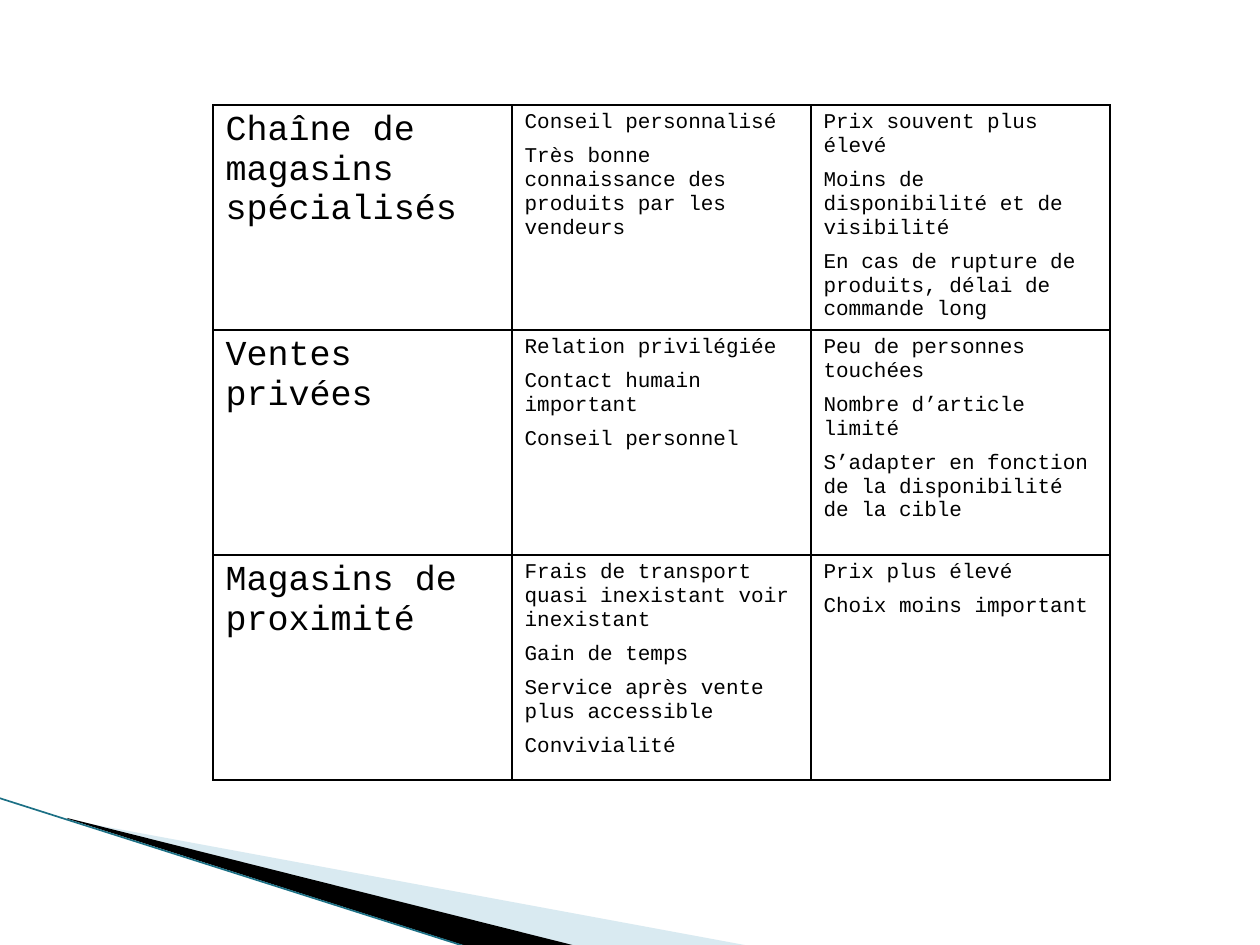
from dataclasses import dataclass

from lxml.etree import SubElement
from pptx import Presentation
from pptx.dml.color import RGBColor
from pptx.enum.shapes import MSO_CONNECTOR as Connector
from pptx.oxml.ns import qn
from pptx.util import Emu, Pt

# Content: one row per sales channel (name, advantages, drawbacks)
CHANNELS = [
    (["Chaîne de magasins spécialisés"],
     ["Conseil personnalisé",
      "Très bonne connaissance des produits par les vendeurs"],
     ["Prix souvent plus élevé",
      "Moins de disponibilité et de visibilité",
      "En cas de rupture de produits, délai de commande long"]),
    (["Ventes privées"],
     ["Relation privilégiée", "Contact humain important", "Conseil personnel"],
     ["Peu de personnes touchées", "Nombre d’article limité",
      "S’adapter en fonction de la disponibilité de la cible"]),
    (["Magasins de proximité"],
     ["Frais de transport quasi inexistant voir inexistant", "Gain de temps",
      "Service après vente plus accessible", "Convivialité"],
     ["Prix plus élevé", "Choix moins important"]),
]

# Corner decoration: outline points in px, colour name, opacity in percent
WEDGES = [
    ([(69, 820), (750, 946), (575, 946), (69, 819)], "pale", 40),
    ([(67, 818), (576, 946), (469, 947), (68, 819)], "ink", 100),
]
EDGE = (-1, 798, 467, 947)

# Geometry in px
SLIDE_WIDTH, SLIDE_HEIGHT = 1260, 945
TABLE_LEFT, TABLE_TOP = 213, 105
COLUMN_WIDTH, ROW_HEIGHT = 299, 225


@dataclass(frozen=True)
class Theme:
    font: str = "Courier New"
    name_size: int = 20
    detail_size: int = 12
    paragraph_gap: int = 6
    ink: str = "000000"
    paper: str = "FFFFFF"
    pale: str = "A0CBDC"
    edge: str = "1C7085"


THEME = Theme()


def px(length):
    return Emu(length * 914400 // 126)


def rgb(name):
    return RGBColor.from_string(getattr(THEME, name))


def write_text(frame, lines, *, size, color="ink"):
    frame.word_wrap = True
    for index, line in enumerate(lines):
        paragraph = frame.paragraphs[0] if index == 0 else frame.add_paragraph()
        paragraph.space_before = Pt(THEME.paragraph_gap if index else 0)
        paragraph.text = line
        font = paragraph.runs[0].font
        font.name, font.size = THEME.font, Pt(size)
        font.color.rgb = rgb(color)


def add_borders(cell):
    properties = cell._tc.get_or_add_tcPr()
    for index, side in enumerate(("lnL", "lnR", "lnT", "lnB")):
        line = properties.makeelement(qn(f"a:{side}"), {"w": str(Pt(1))})
        fill = SubElement(line, qn("a:solidFill"))
        SubElement(fill, qn("a:srgbClr"), val=THEME.ink)
        properties.insert(index, line)


def add_wedge(slide, points, color, opacity):
    start, *others = [(px(x), px(y)) for x, y in points]
    builder = slide.shapes.build_freeform(*start)
    builder.add_line_segments(others, close=True)
    shape = builder.convert_to_shape()
    shape.shadow.inherit = False
    shape.line.fill.background()
    shape.fill.solid()
    shape.fill.fore_color.rgb = rgb(color)
    if opacity < 100:
        color_element = shape._element.spPr.find(".//" + qn("a:srgbClr"))
        SubElement(color_element, qn("a:alpha"), val=str(opacity * 1000))


def add_edge(slide):
    connector = slide.shapes.add_connector(Connector.STRAIGHT, *map(px, EDGE))
    connector.line.color.rgb = rgb("edge")
    connector.line.width = Pt(0.95)
    SubElement(connector._element.spPr, qn("a:effectLst"))


def add_channel_table(slide):
    row_count, column_count = len(CHANNELS), len(CHANNELS[0])
    table = slide.shapes.add_table(
        row_count, column_count, px(TABLE_LEFT), px(TABLE_TOP),
        px(COLUMN_WIDTH * column_count), px(ROW_HEIGHT * row_count)).table
    table.first_row = table.horz_banding = False
    for column in table.columns:
        column.width = px(COLUMN_WIDTH)
    for row, channel in zip(table.rows, CHANNELS):
        row.height = px(ROW_HEIGHT)
        for index, (cell, lines) in enumerate(zip(row.cells, channel)):
            cell.fill.solid()
            cell.fill.fore_color.rgb = rgb("paper")
            add_borders(cell)
            size = THEME.detail_size if index else THEME.name_size
            write_text(cell.text_frame, lines, size=size)


def main():
    presentation = Presentation()
    presentation.slide_width = px(SLIDE_WIDTH)
    presentation.slide_height = px(SLIDE_HEIGHT)
    slide = presentation.slides.add_slide(presentation.slide_layouts[6])

    # Corner decoration, then the table on top
    for points, color, opacity in WEDGES:
        add_wedge(slide, points, color, opacity)
    add_edge(slide)
    add_channel_table(slide)

    presentation.save("out.pptx")


if __name__ == "__main__":
    main()
